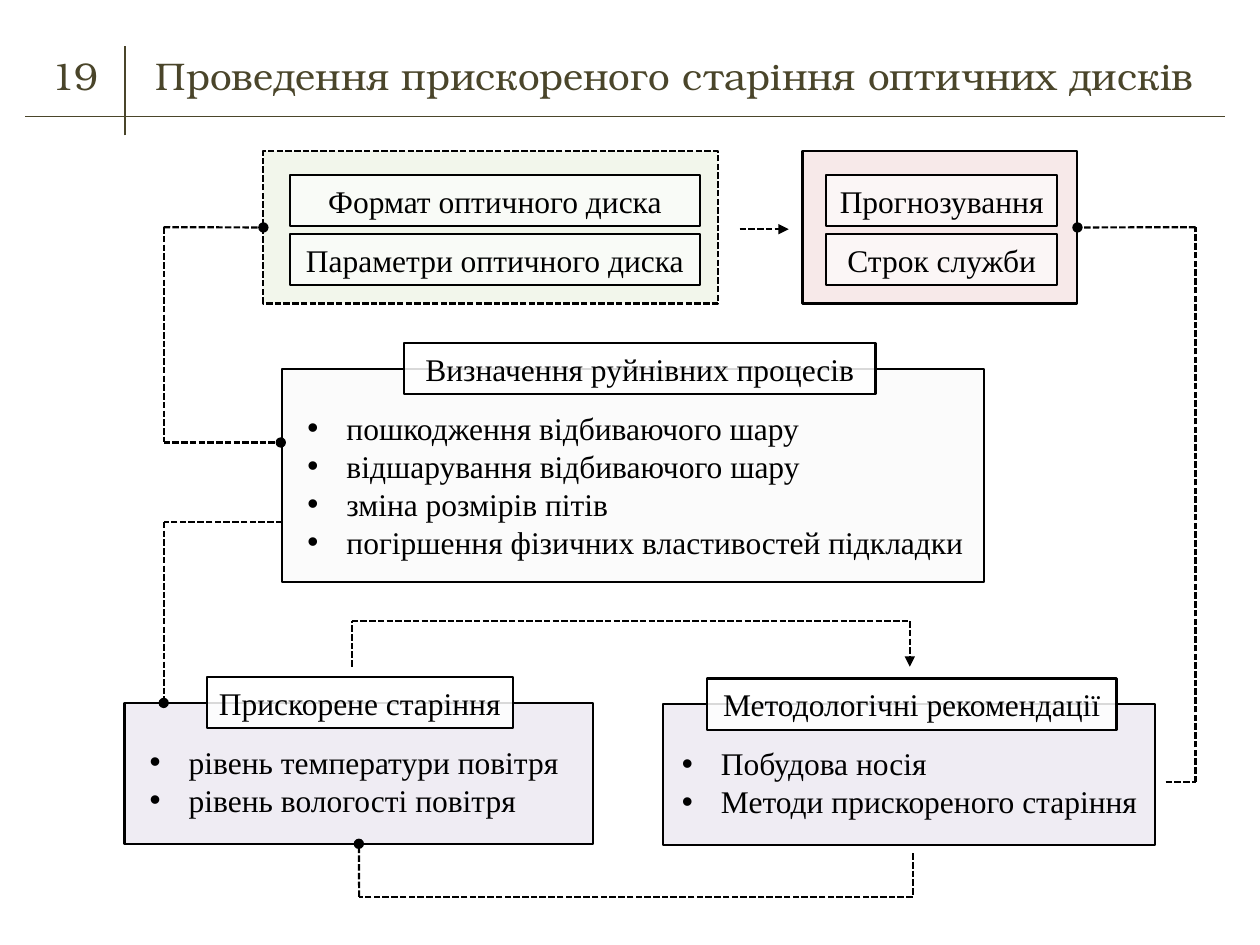
import itertools

import lxml.etree
import pptx
import pptx.dml.color
import pptx.enum.dml
import pptx.enum.shapes
import pptx.enum.text
import pptx.oxml
import pptx.oxml.ns
import pptx.util

Cm = pptx.util.Cm
Pt = pptx.util.Pt
RGBColor = pptx.dml.color.RGBColor
qn = pptx.oxml.ns.qn

BLACK = RGBColor(0x00, 0x00, 0x00)
WHITE = RGBColor(0xFF, 0xFF, 0xFF)
OLIVE = RGBColor(0x4A, 0x45, 0x2A)
GREEN = RGBColor(0xD7, 0xE4, 0xBD)
ROSE = RGBColor(0xE6, 0xB9, 0xB8)
GREY = RGBColor(0xF2, 0xF2, 0xF2)
LILAC = RGBColor(0xCC, 0xC1, 0xDA)

DASH = pptx.enum.dml.MSO_LINE.SQUARE_DOT
CENTER = pptx.enum.text.PP_ALIGN.CENTER
LEFT = pptx.enum.text.PP_ALIGN.LEFT
TOP = pptx.enum.text.MSO_ANCHOR.TOP
MIDDLE = pptx.enum.text.MSO_ANCHOR.MIDDLE

HEADING_FONT = {"name": "TeX Gyre Bonum", "size": Pt(22), "bold": False}
BODY_FONT = {"name": "Times New Roman", "size": Pt(18), "bold": False}
FRAME = {"word_wrap": True, "auto_size": pptx.enum.text.MSO_AUTO_SIZE.NONE}
LABEL_FRAME = FRAME | {
    "vertical_anchor": MIDDLE,
    "margin_left": Cm(0.1), "margin_right": Cm(0.1),
    "margin_top": Cm(0.13), "margin_bottom": Cm(0.13),
}
LIST_FRAME = FRAME | {"vertical_anchor": TOP, "margin_right": 0}
LABEL_HEIGHT = 1.03


def apply(target, values):
    for name, value in values.items():
        setattr(target, name, value)


def place(shape, box):
    apply(shape, dict(zip(("left", "top", "width", "height"), map(Cm, box))))


def write(shape, lines, frame, font, color, alignment, bullets=False):
    text_frame = shape.text_frame
    apply(text_frame, frame)
    for index, line in enumerate(lines):
        paragraph = text_frame.paragraphs[0] if index == 0 else text_frame.add_paragraph()
        if bullets:
            add_bullet(paragraph)
        apply(paragraph, {"alignment": alignment, "space_before": Pt(0)})
        run = paragraph.add_run()
        run.text = line
        apply(run.font, font)
        run.font.color.rgb = color


def add_bullet(paragraph):
    properties = paragraph._p.get_or_add_pPr()
    properties.set("marL", str(Cm(0.79)))
    properties.set("indent", str(-Cm(0.79)))
    lxml.etree.SubElement(properties, qn("a:buFont")).set("typeface", "Arial")
    lxml.etree.SubElement(properties, qn("a:buChar")).set("char", "•")


def add_rectangle(slide, box, color, opacity, dash=None):
    shape = slide.shapes.add_shape(pptx.enum.shapes.MSO_SHAPE.RECTANGLE, *map(Cm, box))
    shape.shadow.inherit = False
    shape.fill.solid()
    shape.fill.fore_color.rgb = color
    color_element = shape.element.spPr.find(qn("a:solidFill"))[0]
    lxml.etree.SubElement(color_element, qn("a:alpha")).set("val", str(opacity * 1000))
    shape.line.color.rgb = BLACK
    apply(shape.line, {"width": Pt(1.25), "dash_style": dash})
    return shape


def add_label(slide, box, text, opacity):
    label = add_rectangle(slide, box, WHITE, opacity)
    write(label, [text], LABEL_FRAME, BODY_FONT, BLACK, CENTER)


def add_line(slide, start, end, color=BLACK, width=1.25, dash=None, tail=None):
    connector = slide.shapes.add_connector(
        pptx.enum.shapes.MSO_CONNECTOR.STRAIGHT, *map(Cm, start + end))
    connector.line.color.rgb = color
    apply(connector.line, {"width": Pt(width), "dash_style": dash})
    if tail:
        line = connector.element.spPr.find(qn("a:ln"))
        lxml.etree.SubElement(line, qn("a:tailEnd")).set("type", tail)
    lxml.etree.SubElement(connector.element.spPr, qn("a:effectLst"))
    return connector


def add_route(slide, points, tail=None, target=None, side=None):
    for start, end in itertools.pairwise(points):
        is_last = end == points[-1]
        connector = add_line(slide, start, end, dash=DASH, tail=tail if is_last else None)
    if target is not None:
        connector.end_connect(target, side)


def add_header(slide, box, title, number):
    left, top, width, height = box
    divider = left + 2.01
    rule = top + 1.43
    add_line(slide, (left, rule), (left + width, rule), OLIVE, 0.75)
    add_line(slide, (divider, rule + 0.38), (divider, top), OLIVE, 0.75)
    number_box = slide.shapes.add_textbox(0, 0, 0, 0)
    for shape, text, offset, shape_width in (
        (slide.shapes.title, title, 2.01, width - 2.01),
        (number_box, number, 0.2, 1.6),
    ):
        place(shape, (left + offset, top, shape_width, height))
        write(shape, [text], FRAME | {"vertical_anchor": MIDDLE},
              HEADING_FONT, OLIVE, CENTER)


def add_entries_panel(slide, box, color, entries, inset, dash=None):
    left, top, width, height = box
    panel = add_rectangle(slide, box, color, 30, dash)
    for index, entry in enumerate(entries):
        entry_box = (left + inset, top + 0.48 + 1.19 * index, width - 0.89, LABEL_HEIGHT)
        add_label(slide, entry_box, entry, 60)
    return panel


def add_list_panel(slide, box, color, heading, heading_offset, heading_width,
                   placeholder, items, inset=0.25):
    left, top, width, height = box
    panel = add_rectangle(slide, box, color, 30)
    heading_box = (left + heading_offset, top - 0.52, heading_width, LABEL_HEIGHT)
    add_label(slide, heading_box, heading, 85)
    place(placeholder, (left + inset, top + 0.68, width - inset, height - 0.96))
    write(placeholder, items, LIST_FRAME, BODY_FONT, BLACK, LEFT, bullets=True)
    placeholder.element.getparent().append(placeholder.element)
    return panel


def add_routes(slide, disc, forecast, ageing):
    upper, lower = 4.58, 18.08
    left, right = 3.3, 24.1
    add_route(slide, [(left, upper), (5.31, upper)], "oval", disc, 1)
    add_route(slide, [(left, upper), (left, 8.92), (5.66, 8.92)], "oval")
    add_route(slide, [(5.69, 10.52), (left, 10.52), (left, 14.17)], "oval")
    add_route(slide, [(7.09, 13.44), (7.09, 12.52), (18.34, 12.52), (18.34, 13.44)],
              "triangle")
    add_route(slide, [(18.4, 17.2), (18.4, lower), (7.24, lower), (7.24, 17.01)],
              "oval", ageing, 2)
    add_route(slide, [(23.5, 15.77), (right, 15.77), (right, upper), (21.72, upper)],
              "oval", forecast, 3)
    add_route(slide, [(14.91, 4.62), (15.9, 4.62)], "triangle")


def main():
    presentation = pptx.Presentation()
    presentation.slide_width = Cm(25.4)
    presentation.slide_height = Cm(19.05)
    slide = presentation.slides.add_slide(presentation.slide_layouts.get_by_name("Comparison"))
    _, processes_list, ageing_list, methods_list, unused = list(slide.placeholders)
    unused.element.getparent().remove(unused.element)

    add_header(slide, (0.51, 0.92, 24.18, 1.2),
               "Проведення прискореного старіння оптичних дисків", "19")
    disc = add_entries_panel(
        slide, (5.31, 3.05, 9.17, 3.07), GREEN,
        ["Формат оптичного диска", "Параметри оптичного диска"], 0.53, DASH)
    forecast = add_entries_panel(
        slide, (16.18, 3.05, 5.54, 3.07), ROSE,
        ["Прогнозування", "Строк служби"], 0.48)
    add_list_panel(
        slide, (5.69, 7.44, 14.15, 4.29), GREY,
        "Визначення руйнівних процесів", 2.46, 9.5, processes_list,
        ["пошкодження відбиваючого шару", "відшарування відбиваючого шару",
         "зміна розмірів пітів", "погіршення фізичних властивостей підкладки"])
    ageing = add_list_panel(
        slide, (2.51, 14.17, 9.45, 2.84), LILAC,
        "Прискорене старіння", 1.66, 6.17, ageing_list,
        ["рівень температури повітря", "рівень вологості повітря"])
    add_list_panel(
        slide, (13.36, 14.2, 9.93, 2.84), LILAC,
        "Методологічні рекомендації", 0.89, 8.26, methods_list,
        ["Побудова носія", "Методи прискореного старіння"], 0.13)
    add_routes(slide, disc, forecast, ageing)
    presentation.save("out.pptx")


if __name__ == "__main__":
    main()
